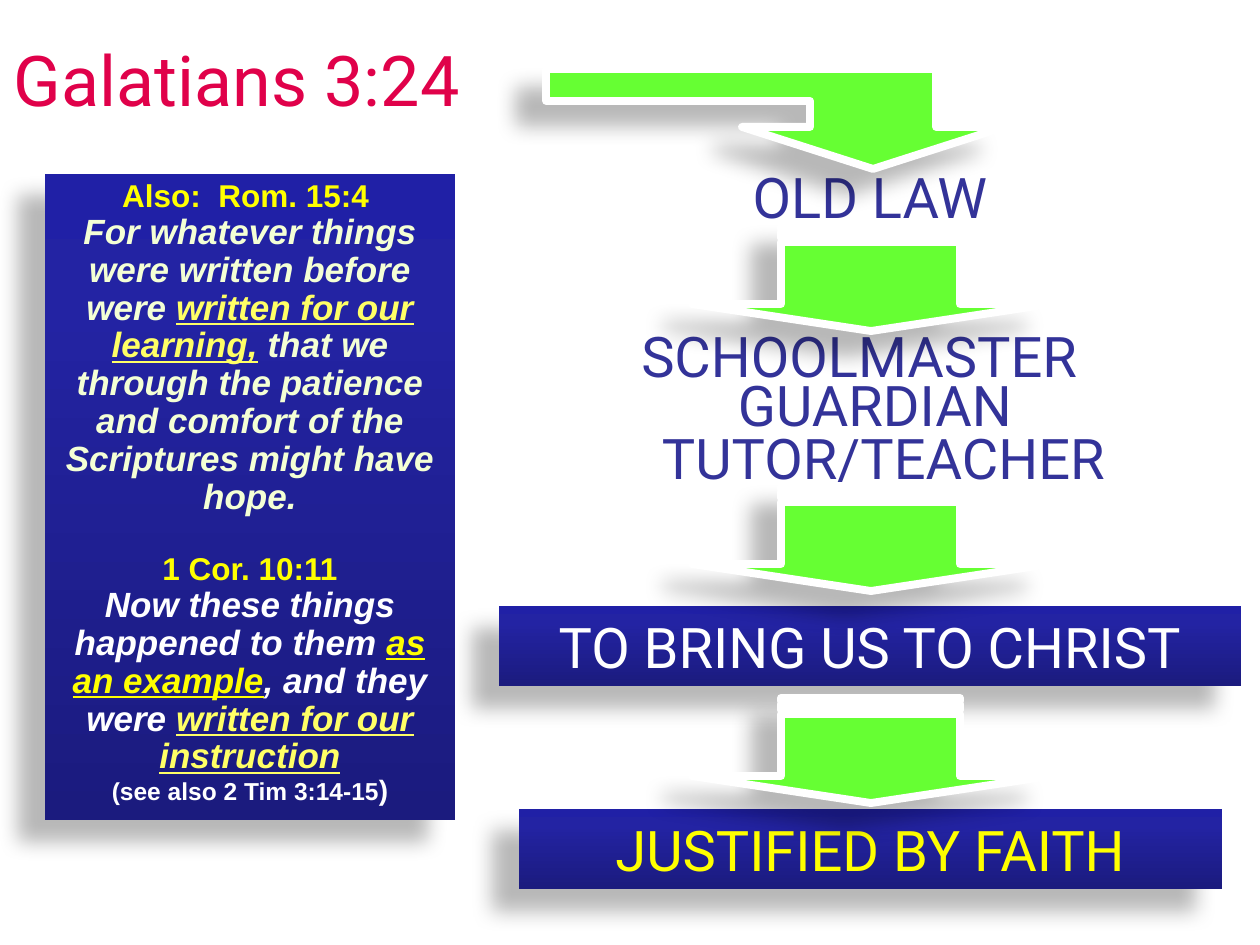
import copy

import pptx
import pptx.dml.color
import pptx.enum.shapes
import pptx.enum.text
import pptx.oxml
import pptx.oxml.ns
import pptx.util
from lxml import etree

SCALE = 914400 / 126
COLORS = {
    "title": "E0014A", "step": "333399", "arrow": "66FF33", "white": "FFFFFF",
    "yellow": "FFFF00", "pale": "FFFF66", "cream": "F4FFD5", "shadow": "000000",
    "deep": "1B1B7E", "royal": "2323A3", "blue": "2020A6",
}
GRADIENT = [(0, "deep"), (0.8, "royal"), (1, "blue")]
STEP = {"name": "Roboto", "size": 32, "color": "step"}
HEADING = {"name": "Arial", "size": 18, "bold": True, "color": "yellow"}
VERSE = {"name": "Arial", "size": 20, "bold": True, "italic": True}
NOTE = {"name": "Arial", "size": 14, "bold": True, "color": "white"}
CREAM = {**VERSE, "color": "cream"}
WHITE = {**VERSE, "color": "white"}
PALE = {**VERSE, "color": "pale", "underline": True}
YELLOW = {**PALE, "color": "yellow"}

STEP_LABELS = [
    ("OLD LAW", 634, 156, 472),
    ("SCHOOLMASTER", 562, 315, 595),
    ("GUARDIAN", 639, 364, 472),
    ("TUTOR/TEACHER", 578, 417, 611),
]
BANNERS = [
    ("TO BRING US TO CHRIST", (499, 606, 742, 80), "white"),
    ("JUSTIFIED BY FAITH", (519, 809, 703, 80), "yellow"),
]
BENT_ARROW = [(873, 169), (742, 127), (810, 127), (810, 101), (546, 101),
              (546, 69), (936, 69), (936, 127), (1004, 127)]
ARROW_TOPS = [226, 486, 698]
VERSES = [
    (0, [("Also:  Rom. 15:4 ", HEADING)]),
    (0, [("For whatever things were written before were ", CREAM),
         ("written for our learning,", PALE),
         (" that we through the patience and comfort of the Scriptures might have hope.", CREAM)]),
    (21, [("1 Cor. 10:11", HEADING)]),
    (0, [("Now these things happened to them ", WHITE),
         ("as an example", YELLOW),
         (", and they were ", WHITE),
         ("written for our instruction", PALE)]),
    (0, [("(see also 2 Tim 3:14-15", NOTE), (")", {**NOTE, "size": 16})]),
]


def px(n):
    return pptx.util.Emu(round(n * SCALE))


def rgb(name):
    return pptx.dml.color.RGBColor.from_string(COLORS[name])


def set_format(target, values):
    for key, value in values.items():
        setattr(target, key, value)


def add_run(p, text, style):
    r = p.add_run()
    r.text = text
    values = dict(style)
    r.font.color.rgb = rgb(values.pop("color"))
    values["size"] = pptx.util.Pt(values["size"])
    set_format(r.font, values)


def write_text(sp, paragraphs, line_spacing=1.0):
    tf = sp.text_frame
    set_format(tf, {
        "word_wrap": True,
        "auto_size": pptx.enum.text.MSO_AUTO_SIZE.SHAPE_TO_FIT_TEXT,
        "vertical_anchor": pptx.enum.text.MSO_ANCHOR.TOP,
    })
    for i, (before, runs) in enumerate(paragraphs):
        p = tf.add_paragraph() if i else tf.paragraphs[0]
        set_format(p, {
            "alignment": pptx.enum.text.PP_ALIGN.CENTER,
            "line_spacing": line_spacing,
            "space_before": pptx.util.Pt(before),
        })
        for text, style in runs:
            add_run(p, text, style)


def add_shadow(sp):
    sp.shadow.inherit = False
    qn = pptx.oxml.ns.qn
    effects = sp._element.spPr.find(qn("a:effectLst"))
    shadow = etree.SubElement(effects, qn("a:outerShdw"), blurRad="150000", dist="250000",
                              dir=str(141 * 60000), algn="ctr", rotWithShape="0")
    color = etree.SubElement(shadow, qn("a:srgbClr"), val=COLORS["shadow"])
    etree.SubElement(color, qn("a:alpha"), val="28000")


def add_panel(s, box, paragraphs, line_spacing=1.0):
    sp = s.shapes.add_shape(pptx.enum.shapes.MSO_SHAPE.RECTANGLE, *map(px, box))
    sp.fill.gradient()
    sp.fill.gradient_angle = 90
    gs = sp._element.spPr.find(".//" + pptx.oxml.ns.qn("a:gs"))
    gs.addnext(copy.deepcopy(gs))
    for stop, (position, color) in zip(sp.fill.gradient_stops, GRADIENT):
        stop.position = position
        stop.color.rgb = rgb(color)
    sp.line.fill.background()
    add_shadow(sp)
    write_text(sp, paragraphs, line_spacing)


def add_label(s, text, left, top, width):
    sp = s.shapes.add_textbox(px(left), px(top), px(width), px(80))
    write_text(sp, [(0, [(text, STEP)])])


def add_arrow(s, contours):
    builder = s.shapes.build_freeform(*contours[0][0], scale=SCALE)
    for i, contour in enumerate(contours):
        if i:
            builder.move_to(*contour[0])
        builder.add_line_segments(contour[1:], close=True)
    sp = builder.convert_to_shape()
    sp.fill.solid()
    sp.fill.fore_color.rgb = rgb("arrow")
    sp.line.color.rgb = rgb("white")
    sp.line.width = pptx.util.Pt(4.5)
    add_shadow(sp)


def down_arrow(top):
    left, right, mid = 781, 960, 871
    head = [(1050, 78), (right, 78), (right, 16), (left, 16), (left, 78), (692, 78), (mid, 105)]
    bands = [[(right, y), (left, y), (left, y + h), (right, y + h)] for y, h in [(6, 6), (0, 3)]]
    return [[(x, top + y) for x, y in contour] for contour in [head, *bands]]


def add_title(s, text):
    sp = s.shapes.title
    set_format(sp, {"left": px(14), "top": px(4), "width": px(1235), "height": px(157)})
    tf = sp.text_frame
    set_format(tf, {
        "margin_left": 0, "margin_right": 0, "margin_top": 0, "margin_bottom": 0,
        "word_wrap": True, "vertical_anchor": pptx.enum.text.MSO_ANCHOR.MIDDLE,
    })
    p = tf.paragraphs[0]
    set_format(p, {"alignment": pptx.enum.text.PP_ALIGN.LEFT, "line_spacing": 0.95})
    add_run(p, text, {"name": "Roboto", "size": 40, "color": "title"})


def main():
    prs = pptx.Presentation()
    prs.slide_width, prs.slide_height = px(1260), px(945)
    s = prs.slides.add_slide(prs.slide_layouts[5])
    add_title(s, "Galatians 3:24")
    for text, box, color in BANNERS:
        add_panel(s, box, [(0, [(text, {**STEP, "color": color})])])
    add_panel(s, (45, 174, 410, 646), VERSES, 0.9)
    for label in STEP_LABELS:
        add_label(s, *label)
    add_arrow(s, [BENT_ARROW])
    for top in ARROW_TOPS:
        add_arrow(s, down_arrow(top))
    prs.save("out.pptx")


if __name__ == "__main__":
    main()
